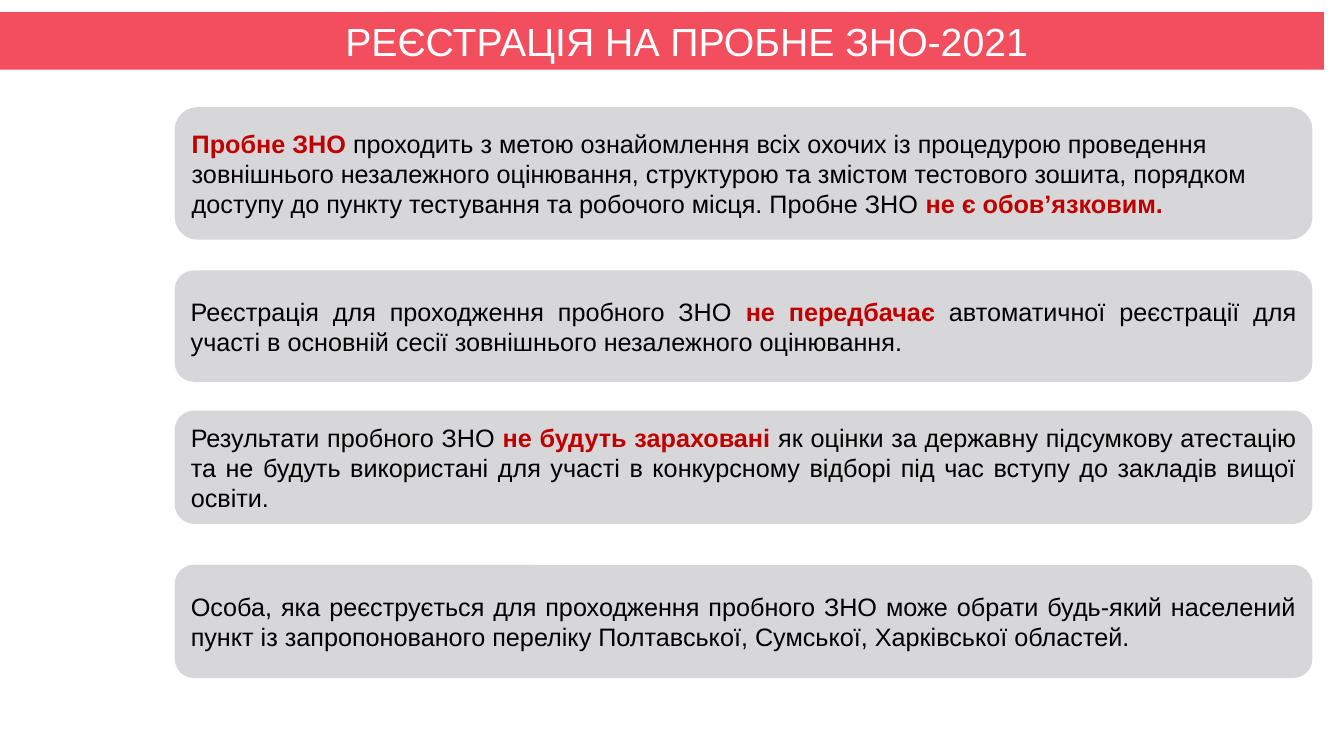
from pptx import Presentation
from pptx import util as u
from pptx.dml.color import RGBColor
from pptx.enum import shapes, text

CORAL = RGBColor(0xF2, 0x4E, 0x5E)
GREY = RGBColor(0xD7, 0xD7, 0xD9)
RED = RGBColor(0xC0, 0x00, 0x00)
BLACK = RGBColor(0, 0, 0)
WHITE = RGBColor(0xFF, 0xFF, 0xFF)
FONT = "Arial"
LEFT, JUSTIFY = text.PP_ALIGN.LEFT, text.PP_ALIGN.JUSTIFY

TITLE = "РЕЄСТРАЦІЯ НА ПРОБНЕ ЗНО-2021"
TITLE_BOX = (0, 0.12, 13.13, 0.57)
CARD_LEFT, CARD_WIDTH = 1.74, 11.27

# Each card: top, height, alignment, runs as (wording, emphasised)
CARDS = [
    (1.07, 1.3, LEFT, [
        ("Пробне ЗНО ", True),
        ("проходить з метою ознайомлення всіх охочих із процедурою проведення "
         "зовнішнього незалежного оцінювання, структурою та змістом тестового "
         "зошита, порядком доступу до пункту тестування та робочого місця. "
         "Пробне ЗНО ", False),
        ("не є обов’язковим.", True)]),
    (2.69, 1.09, JUSTIFY, [
        ("Реєстрація для проходження пробного ЗНО ", False),
        ("не передбачає ", True),
        ("автоматичної реєстрації для участі в основній сесії зовнішнього "
         "незалежного оцінювання.", False)]),
    (4.08, 1.11, JUSTIFY, [
        ("Результати пробного ЗНО ", False),
        ("не будуть зараховані ", True),
        ("як оцінки за державну підсумкову атестацію та не будуть використані "
         "для участі в конкурсному відборі під час вступу до закладів вищої "
         "освіти.", False)]),
    (5.61, 1.11, JUSTIFY, [
        ("Особа, яка реєструється для проходження пробного ЗНО може обрати "
         "будь-який населений пункт із запропонованого переліку Полтавської, "
         "Сумської, Харківської областей.", False)]),
]


def add_run(paragraph, wording, size, color, bold=False):
    run = paragraph.add_run()
    run.text = wording
    run.font.name = FONT
    run.font.size = u.Pt(size)
    run.font.bold = bold
    run.font.color.rgb = color


def place_title(slide, box):
    banner = slide.shapes.title
    banner.left, banner.top, banner.width, banner.height = map(u.Inches, box)
    banner.fill.solid()
    banner.fill.fore_color.rgb = CORAL
    frame = banner.text_frame
    frame.auto_size = text.MSO_AUTO_SIZE.NONE
    frame.vertical_anchor = text.MSO_ANCHOR.MIDDLE
    heading = frame.paragraphs[0]
    heading.alignment = text.PP_ALIGN.CENTER
    # Left indent shifts the centred heading to the right
    heading._p.get_or_add_pPr().set("marL", str(u.Inches(0.49)))
    add_run(heading, TITLE, 28, WHITE)


def add_card(slide, box, alignment, runs):
    card = slide.shapes.add_shape(
        shapes.MSO_SHAPE.ROUNDED_RECTANGLE, *map(u.Inches, box))
    card.shadow.inherit = False
    card.fill.solid()
    card.fill.fore_color.rgb = GREY
    card.line.color.rgb = GREY
    card.line.width = u.Pt(1)
    frame = card.text_frame
    frame.word_wrap = True
    frame.vertical_anchor = text.MSO_ANCHOR.MIDDLE
    statement = frame.paragraphs[0]
    statement.alignment = alignment
    for wording, emphasised in runs:
        add_run(statement, wording, 18, RED if emphasised else BLACK, emphasised)


def main():
    deck = Presentation()
    deck.slide_width, deck.slide_height = u.Inches(13.33), u.Inches(7.5)
    slide = deck.slides.add_slide(deck.slide_layouts[5])
    place_title(slide, TITLE_BOX)
    for top, height, alignment, runs in CARDS:
        add_card(slide, (CARD_LEFT, top, CARD_WIDTH, height), alignment, runs)
    deck.save("out.pptx")


if __name__ == "__main__":
    main()
